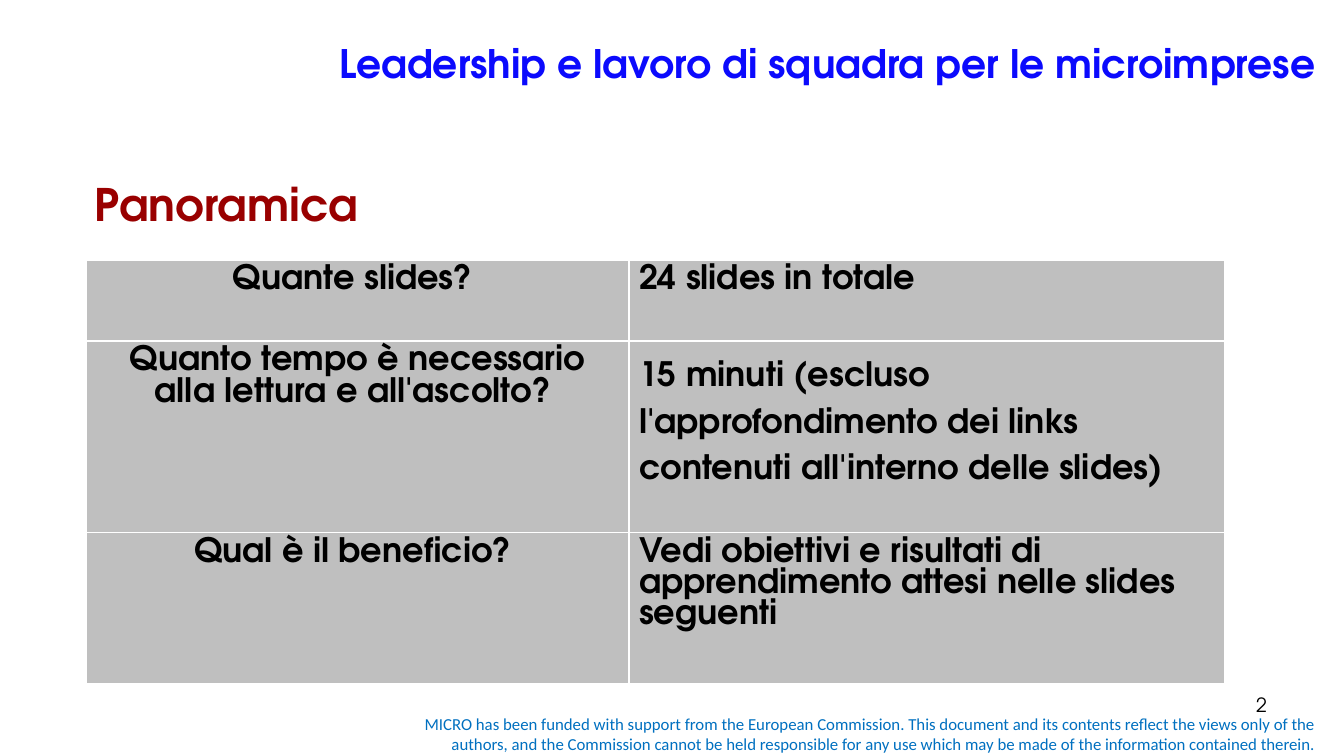
import pptx
import pptx.dml.color
import pptx.enum.text
import pptx.oxml
import pptx.oxml.ns
import pptx.util

ALIGN = pptx.enum.text.PP_ALIGN
ANCHOR = pptx.enum.text.MSO_ANCHOR

COLORS = {
    "title": "0B0AFD",
    "heading": "990000",
    "text": "000000",
    "funding": "0070C0",
    "cell": "BFBFBF",
    "border": "FFFFFF",
}


def px(length):
    """Turn px (100.8 to the inch) into EMU."""
    return pptx.util.Emu(round(length * 914400 / 100.8))


def rgb(name):
    return pptx.dml.color.RGBColor.from_string(COLORS[name])


class OverviewSlide:
    """The current slide and its text and table style."""

    font = "TeX Gyre Adventor"

    def __init__(self, presentation):
        self.slide = presentation.slides.add_slide(presentation.slide_layouts[6])

    def fill_frame(self, frame, text, size, color, bold=False, align=ALIGN.LEFT, font=None):
        frame.text = text
        paragraph = frame.paragraphs[0]
        paragraph.alignment = align
        for run in paragraph.runs:
            run.font.name = font or self.font
            run.font.size = pptx.util.Pt(size)
            run.font.bold = bold
            run.font.color.rgb = rgb(color)

    def text(self, box, text, size, color, anchor=ANCHOR.TOP, **style):
        frame = self.slide.shapes.add_textbox(*map(px, box)).text_frame
        frame.word_wrap = True
        frame.vertical_anchor = anchor
        self.fill_frame(frame, text, size, color, **style)

    def border(self, cell):
        properties = cell._tc.get_or_add_tcPr()
        for side in "LRTB":
            properties.append(pptx.oxml.parse_xml(
                f'<a:ln{side} {pptx.oxml.ns.nsdecls("a")} w="12700"><a:solidFill>'
                f'<a:srgbClr val="{COLORS["border"]}"/></a:solidFill></a:ln{side}>'))

    def table(self, left, top, widths, heights, rows):
        table = self.slide.shapes.add_table(
            len(heights), len(widths), px(left), px(top),
            px(sum(widths)), px(sum(heights))).table
        table.first_row = table.horz_banding = False
        for column, width in zip(table.columns, widths):
            column.width = px(width)
        for row, height, texts in zip(table.rows, heights, rows):
            row.height = px(height)
            for cell, text, align in zip(row.cells, texts, (ALIGN.CENTER, ALIGN.LEFT)):
                self.border(cell)
                cell.fill.solid()
                cell.fill.fore_color.rgb = rgb("cell")
                self.fill_frame(cell.text_frame, text, 24, "text", bold=True, align=align)
        return table


def main():
    presentation = pptx.Presentation()
    presentation.slide_width = px(1344)
    presentation.slide_height = px(756)
    overview = OverviewSlide(presentation)

    overview.text(
        (378, 709, 948, 50),
        "MICRO has been funded with support from the European Commission. "
        "This document and its contents reflect the views only of the authors, "
        "and the Commission cannot be held responsible for any use which may be "
        "made of the information contained therein.",
        12, "funding", anchor=ANCHOR.MIDDLE, align=ALIGN.RIGHT, font="Calibri")
    overview.text(
        (115, 0, 1210, 126), "Leadership e lavoro di squadra per le microimprese",
        28, "title", anchor=ANCHOR.MIDDLE, bold=True, align=ALIGN.RIGHT)

    questions = overview.table(86, 260, (543, 596), (81, 150, 151), [
        ("Quante slides? ", "24 slides in totale"),
        ("Quanto tempo è necessario alla lettura e all'ascolto? ",
         "15 minuti (escluso l'approfondimento dei links contenuti "
         "all'interno delle slides)"),
        ("Qual è il beneficio? ",
         "Vedi obiettivi e risultati di apprendimento attesi nelle slides seguenti "),
    ])
    reading_time = questions.cell(1, 1).text_frame.paragraphs[0]
    reading_time.line_spacing = 1.5

    overview.text((964, 688, 313, 52), "2", 14, "text", align=ALIGN.RIGHT)
    overview.text((85, 172, 292, 65), "Panoramica", 32, "heading", bold=True)
    presentation.save("out.pptx")


if __name__ == "__main__":
    main()
